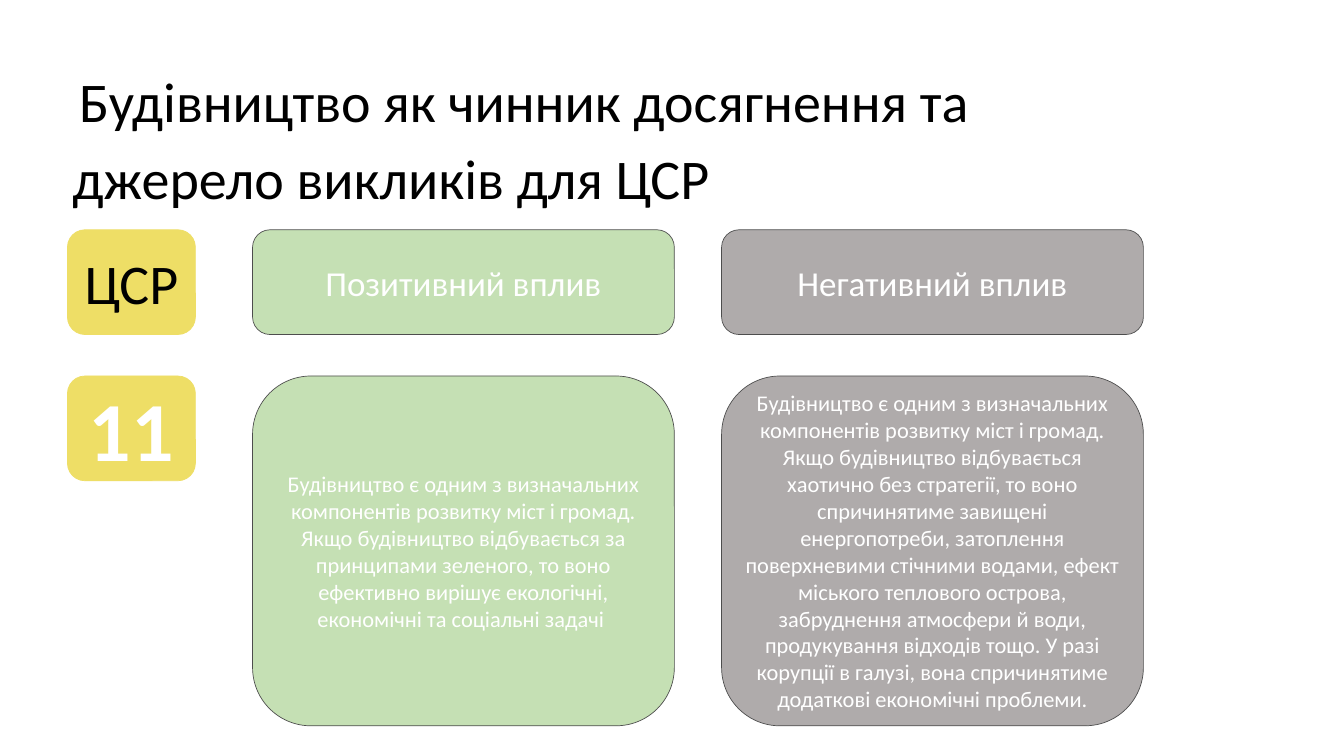
from dataclasses import dataclass

from pptx import Presentation
from pptx.dml.color import RGBColor
from pptx.enum.shapes import MSO_SHAPE as Shape
from pptx.enum.text import MSO_ANCHOR as Anchor, MSO_AUTO_SIZE as AutoSize, PP_ALIGN as Align
from pptx.slide import Slide
from pptx.util import Cm, Pt

YELLOW = RGBColor(0xEE, 0xDE, 0x66)
GREEN = RGBColor(0xC5, 0xE0, 0xB4)
GRAY = RGBColor(0xAF, 0xAB, 0xAB)
OUTLINE = RGBColor(0x4D, 0x4D, 0x4D)
WHITE = RGBColor(0xFF, 0xFF, 0xFF)
BLACK = RGBColor(0x00, 0x00, 0x00)
FONT = "Calibri"

HEADER_TOP, ROW_TOP = 11.58, 18.95
LABEL_HEIGHT, BODY_HEIGHT = 5.28, 17.63
GOAL_LEFT, GOAL_WIDTH = 3.4, 6.45
IMPACT_WIDTH = 21.26

TITLE_LINES = (
    ("Будівництво як чинник досягнення та ", Align.CENTER),
    ("джерело викликів для ЦСР", Align.LEFT),
)


@dataclass(frozen=True)
class Card:
    text: str
    left: float
    top: float
    width: float
    height: float
    fill: RGBColor
    outline: RGBColor
    size: int
    color: RGBColor = WHITE
    bold: bool = False


@dataclass(frozen=True)
class Impact:
    heading: str
    body: str
    left: float
    fill: RGBColor

    def cards(self) -> list[Card]:
        return [
            Card(self.heading, self.left, HEADER_TOP, IMPACT_WIDTH, LABEL_HEIGHT,
                 self.fill, OUTLINE, 50),
            Card(self.body, self.left, ROW_TOP, IMPACT_WIDTH, BODY_HEIGHT,
                 self.fill, OUTLINE, 32),
        ]


GOAL_CARDS = [
    Card("ЦСР", GOAL_LEFT, HEADER_TOP, GOAL_WIDTH, LABEL_HEIGHT, YELLOW, YELLOW, 80, BLACK),
    Card("11", GOAL_LEFT, ROW_TOP, GOAL_WIDTH, LABEL_HEIGHT, YELLOW, YELLOW, 120, bold=True),
]

IMPACTS = [
    Impact(
        "Позитивний вплив",
        "Будівництво є одним з визначальних компонентів розвитку міст і громад. "
        "Якщо будівництво відбувається за принципами зеленого, то воно ефективно "
        "вирішує екологічні, економічні та соціальні задачі ",
        12.73,
        GREEN,
    ),
    Impact(
        "Негативний вплив",
        "Будівництво є одним з визначальних компонентів розвитку міст і громад. "
        "Якщо будівництво відбувається хаотично без стратегії, то воно спричинятиме "
        "завищені енергопотреби, затоплення поверхневими стічними водами, ефект "
        "міського теплового острова, забруднення атмосфери й води, продукування "
        "відходів тощо. У разі корупції в галузі, вона спричинятиме додаткові "
        "економічні проблеми.",
        36.37,
        GRAY,
    ),
]


def add_title(page: Slide) -> None:
    title = page.shapes.title
    title.left, title.top, title.width, title.height = Cm(3.4), Cm(2.97), Cm(46.69), Cm(7.85)
    frame = title.text_frame
    frame.word_wrap = False
    frame.auto_size = AutoSize.SHAPE_TO_FIT_TEXT
    frame.vertical_anchor = Anchor.TOP
    frame.text = "\n".join(text for text, _ in TITLE_LINES)
    for paragraph, (_, alignment) in zip(frame.paragraphs, TITLE_LINES):
        paragraph.alignment = alignment
        paragraph.line_spacing = 1.07
        paragraph.space_after = Pt(8)
        paragraph.font.name = FONT
        paragraph.font.size = Pt(80)
        paragraph.font.color.rgb = BLACK


def add_card(page: Slide, card: Card) -> None:
    box = page.shapes.add_shape(
        Shape.ROUNDED_RECTANGLE, Cm(card.left), Cm(card.top), Cm(card.width), Cm(card.height)
    )
    box.shadow.inherit = False
    box.fill.solid()
    box.fill.fore_color.rgb = card.fill
    box.line.color.rgb = card.outline
    box.line.width = Pt(1)
    frame = box.text_frame
    frame.word_wrap = True
    frame.vertical_anchor = Anchor.MIDDLE
    frame.text = card.text
    paragraph = frame.paragraphs[0]
    paragraph.alignment = Align.CENTER
    paragraph.font.name = FONT
    paragraph.font.size = Pt(card.size)
    paragraph.font.bold = card.bold
    paragraph.font.color.rgb = card.color


def main() -> None:
    deck = Presentation()
    deck.slide_width, deck.slide_height = Cm(67.74), Cm(38.1)
    page = deck.slides.add_slide(deck.slide_layouts.get_by_name("Title Only"))
    add_title(page)
    for card in GOAL_CARDS:
        add_card(page, card)
    for impact in IMPACTS:
        for card in impact.cards():
            add_card(page, card)
    deck.save("out.pptx")


if __name__ == "__main__":
    main()
